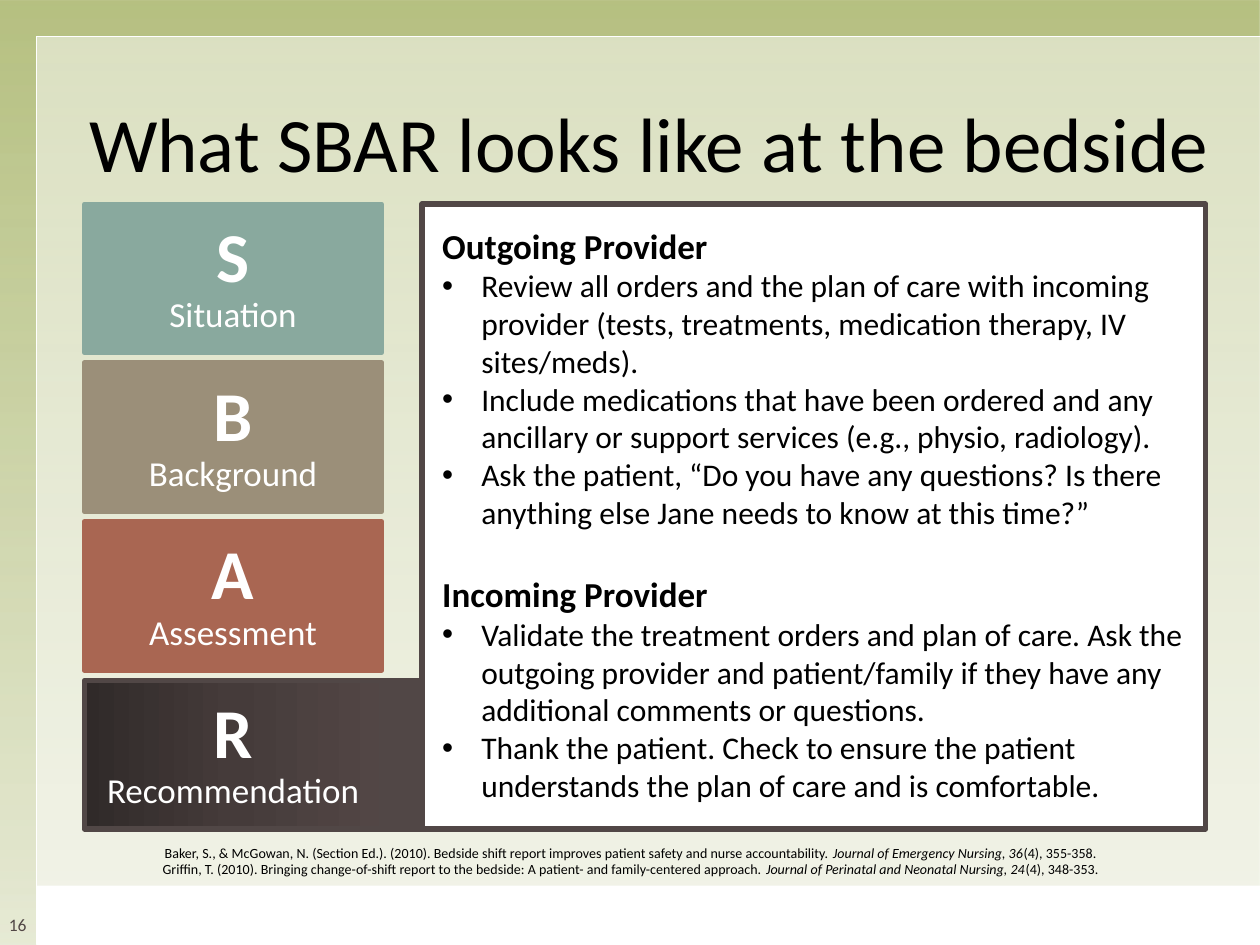
from pptx import Presentation, util as u
from pptx.dml.color import RGBColor
from pptx.enum import shapes, text
from pptx.oxml import parse_xml
from pptx.oxml.ns import nsdecls, qn

THEME = {
    "font": "Calibri", "black": "000000", "white": "FFFFFF",
    "green": "9EAC58", "dark": "514746",
    "title": 44, "letter": 40, "heading": 20, "body": 18, "number": 10, "source": 8,
}
TITLE = "What SBAR looks like at the bedside"
STEPS = [
    ("S", "Situation", "89A99E"),
    ("B", "Background", "9B8F79"),
    ("A", "Assessment", "A96652"),
    ("R", "Recommendation", THEME["dark"]),
]
STEP_GRADIENT = [(0, "302A29", 100), (50, "453B3A", 100), (100, "524645", 100)]
PAGE_GRADIENT = [(0, THEME["green"], 75), (50, THEME["green"], 50), (100, THEME["green"], 25)]
PROVIDERS = [
    ("Outgoing Provider", [
        "Review all orders and the plan of care with incoming provider "
        "(tests, treatments, medication therapy, IV sites/meds).",
        "Include medications that have been ordered and any ancillary or "
        "support services (e.g., physio, radiology).",
        "Ask the patient, “Do you have any questions? Is there anything "
        "else Jane needs to know at this time?”",
    ]),
    ("Incoming Provider", [
        "Validate the treatment orders and plan of care. Ask the outgoing provider "
        "and patient/family if they have any additional comments or questions.",
        "Thank the patient. Check to ensure the patient understands the plan of "
        "care and is comfortable.",
    ]),
]
SOURCES = [
    ("Baker, S., & McGowan, N. (Section Ed.). (2010). Bedside shift report improves "
     "patient safety and nurse accountability. ",
     "Journal of Emergency Nursing, 36", "(4), 355-358."),
    ("Griffin, T. (2010). Bringing change-of-shift report to the bedside: "
     "A patient- and family-centered approach. ",
     "Journal of Perinatal and Neonatal Nursing, 24", "(4), 348-353."),
]
LEFT, TOP, STEP_WIDTH, STEP_HEIGHT, STEP_PITCH = 0.67, 1.62, 2.36, 1.18, 1.26
PANEL_LEFT, PANEL_WIDTH = 3.35, 6.22
BULLET_INDENT = 0.31


def add_rectangle(slide, box, fill, line=None, line_width=3, alpha=None):
    shape = slide.shapes.add_shape(shapes.MSO_SHAPE.RECTANGLE, *map(u.Inches, box))
    shape.shadow.inherit = False
    shape.fill.solid()
    shape.fill.fore_color.rgb = RGBColor.from_string(fill)
    if alpha is not None:
        color = shape._element.spPr.find(qn("a:solidFill"))[0]
        color.append(parse_xml(f'<a:alpha {nsdecls("a")} val="{alpha * 1000}"/>'))
    if line:
        shape.line.color.rgb = RGBColor.from_string(line)
        shape.line.width = u.Pt(line_width)
    else:
        shape.line.fill.background()
    return shape


def set_gradient(shape, stops, angle):
    """Replace the solid fill; stops are (position, colour, opacity) in percent."""
    stop_xml = "".join(
        f'<a:gs pos="{position * 1000}"><a:srgbClr val="{color}">'
        f'<a:alpha val="{opacity * 1000}"/></a:srgbClr></a:gs>'
        for position, color, opacity in stops)
    properties = shape._element.spPr
    properties.replace(properties.find(qn("a:solidFill")), parse_xml(
        f'<a:gradFill {nsdecls("a")} rotWithShape="1"><a:gsLst>{stop_xml}</a:gsLst>'
        f'<a:lin ang="{angle * 60000}" scaled="0"/></a:gradFill>'))


def add_text_box(slide, box, wrap=True):
    frame = slide.shapes.add_textbox(*map(u.Inches, box)).text_frame
    frame.word_wrap = wrap
    return frame


def set_margins(frame, left, top, right, bottom):
    frame.margin_left, frame.margin_top = u.Inches(left), u.Inches(top)
    frame.margin_right, frame.margin_bottom = u.Inches(right), u.Inches(bottom)


def write(frame, *runs, size, color=THEME["black"], bold=False, italic_runs=(),
          align=text.PP_ALIGN.CENTER, spacing=None, before=None, bullet=False):
    """Add one paragraph, reusing the frame's first paragraph while it is empty."""
    first = frame.paragraphs[0]
    paragraph = frame.add_paragraph() if first.runs else first
    paragraph.alignment = align
    if spacing:
        paragraph.line_spacing = spacing
    if before:
        paragraph.space_before = u.Pt(before)
    if bullet:
        properties = paragraph._p.get_or_add_pPr()
        properties.set("marL", str(u.Inches(BULLET_INDENT)))
        properties.set("indent", str(-u.Inches(BULLET_INDENT)))
        properties.append(parse_xml(f'<a:buFont {nsdecls("a")} typeface="Arial"/>'))
        properties.append(parse_xml(f'<a:buChar {nsdecls("a")} char="•"/>'))
    for index, words in enumerate(runs):
        run = paragraph.add_run()
        run.text = words
        run.font.name = THEME["font"]
        run.font.size = u.Pt(size)
        run.font.bold = bold
        run.font.italic = index in italic_runs
        run.font.color.rgb = RGBColor.from_string(color)


def add_background(slide):
    white = THEME["white"]
    page = add_rectangle(slide, (-0.01, 0, 10.01, 7.5), THEME["green"])
    set_gradient(page, PAGE_GRADIENT, 90)
    add_rectangle(slide, (0.29, 0.29, 9.72, 7.2), white, white, line_width=1, alpha=50)
    add_rectangle(slide, (0.29, 7.03, 9.72, 0.47), white)
    number = add_text_box(slide, (0, 7.03, 0.28, 0.47))
    set_margins(number, 0, 0.04, 0, 0.08)
    number.vertical_anchor = text.MSO_ANCHOR.BOTTOM
    write(number, "16", size=THEME["number"], color=THEME["dark"])


def add_steps(slide):
    last_top = TOP + (len(STEPS) - 1) * STEP_PITCH
    add_rectangle(slide, (LEFT + STEP_WIDTH, last_top, 0.39, STEP_HEIGHT),
                  THEME["dark"], THEME["dark"])
    for index, (letter, name, color) in enumerate(STEPS):
        box = (LEFT, TOP + index * STEP_PITCH, STEP_WIDTH, STEP_HEIGHT)
        step = add_rectangle(slide, box, color, color)
        if index == len(STEPS) - 1:
            set_gradient(step, STEP_GRADIENT, 0)
        frame = step.text_frame
        frame.word_wrap = True
        frame.vertical_anchor = text.MSO_ANCHOR.MIDDLE
        style = {"color": THEME["white"], "spacing": 0.9}
        write(frame, letter, size=THEME["letter"], bold=True, **style)
        write(frame, name, size=THEME["heading"], **style)


def add_panel(slide):
    height = (len(STEPS) - 1) * STEP_PITCH + STEP_HEIGHT
    panel = add_rectangle(slide, (PANEL_LEFT, TOP, PANEL_WIDTH, height),
                          THEME["white"], THEME["dark"])
    frame = panel.text_frame
    frame.word_wrap = True
    frame.vertical_anchor = text.MSO_ANCHOR.TOP
    set_margins(frame, 0.16, 0.16, 0.16, 0.16)
    for index, (heading, duties) in enumerate(PROVIDERS):
        write(frame, heading, size=THEME["heading"], bold=True,
              align=text.PP_ALIGN.LEFT, before=24 if index else None)
        for duty in duties:
            write(frame, duty, size=THEME["body"], align=text.PP_ALIGN.LEFT, bullet=True)


def main():
    presentation = Presentation()
    presentation.slide_width, presentation.slide_height = u.Inches(10), u.Inches(7.5)
    slide = presentation.slides.add_slide(presentation.slide_layouts[6])
    add_background(slide)
    title = add_text_box(slide, (0.58, 0.5, 9.15, 1.25))
    title.vertical_anchor = text.MSO_ANCHOR.MIDDLE
    write(title, TITLE, size=THEME["title"])
    add_steps(slide)
    add_panel(slide)
    sources = add_text_box(slide, (1.15, 6.65, 7.71, 0.37), wrap=False)
    for source in SOURCES:
        write(sources, *source, size=THEME["source"], italic_runs=(1,))
    presentation.save("out.pptx")


if __name__ == "__main__":
    main()
